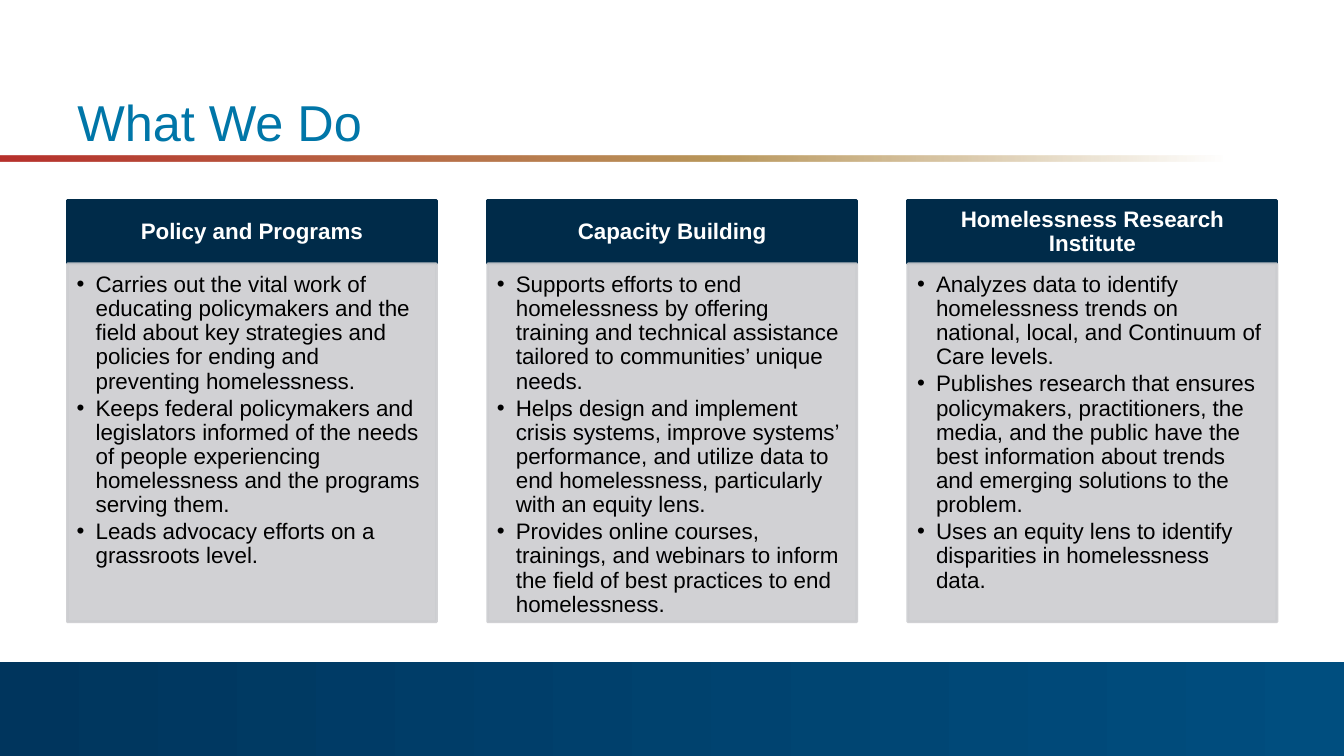
from lxml import etree
from pptx import Presentation, util as u
from pptx.dml.color import RGBColor
from pptx.enum import shapes, text
from pptx.oxml import ns

COLORS = {
    "title": "0076A8", "header": "002B49", "panel": "CCCDD0",
    "white": "FFFFFF", "black": "000000",
    "footer_start": "00355D", "footer_end": "004E7F",
    "red": "B7302C", "gold": "B9975B",
}
SLIDE_W, SLIDE_H = 33.87, 19.05
MARGIN, COLUMN_W, COLUMN_STEP = 1.7, 9.3, 10.59
HEADER_TOP, HEADER_H = 5.06, 1.58
PANEL_TOP, PANEL_H = 6.65, 9.02

PROGRAMS = [
    ("Policy and Programs", [
        "Carries out the vital work of educating policymakers and the field about "
        "key strategies and policies for ending and preventing homelessness.",
        "Keeps federal policymakers and legislators informed of the needs of people "
        "experiencing homelessness and the programs serving them.",
        "Leads advocacy efforts on a grassroots level.",
    ]),
    ("Capacity Building", [
        "Supports efforts to end homelessness by offering training and technical "
        "assistance tailored to communities’ unique needs.",
        "Helps design and implement crisis systems, improve systems’ performance, "
        "and utilize data to end homelessness, particularly with an equity lens.",
        "Provides online courses, trainings, and webinars to inform the field of "
        "best practices to end homelessness.",
    ]),
    ("Homelessness Research Institute", [
        "Analyzes data to identify homelessness trends on national, local, and "
        "Continuum of Care levels.",
        "Publishes research that ensures policymakers, practitioners, the media, and "
        "the public have the best information about trends and emerging solutions "
        "to the problem.",
        "Uses an equity lens to identify disparities in homelessness data.",
    ]),
]


def rgb(name):
    return RGBColor.from_string(COLORS[name])


class SlideBuilder:
    font = "Arial"

    def __init__(self, slide):
        self.slide = slide

    def place(self, shape, left, top, width, height):
        shape.left, shape.top = u.Cm(left), u.Cm(top)
        shape.width, shape.height = u.Cm(width), u.Cm(height)

    def frame(self, shape, anchor, insets):
        frame = shape.text_frame
        frame.word_wrap = True
        frame.auto_size = text.MSO_AUTO_SIZE.NONE
        frame.vertical_anchor = anchor
        (frame.margin_left, frame.margin_top,
         frame.margin_right, frame.margin_bottom) = map(u.Cm, insets)
        return frame

    def run(self, paragraph, words, size, color, bold=False):
        run = paragraph.add_run()
        run.text = words
        run.font.name, run.font.size, run.font.bold = self.font, u.Pt(size), bold
        run.font.color.rgb = rgb(color)

    def paint(self, shape, color, opacity=100):
        shape.fill.solid()
        shape.fill.fore_color.rgb = rgb(color)
        shape.line.width = u.Pt(2)
        shape.line.color.rgb = rgb(color)
        if opacity < 100:
            for tint in shape.element.spPr.iter(ns.qn("a:srgbClr")):
                etree.SubElement(tint, ns.qn("a:alpha"), val=str(opacity * 1000))

    def rectangle(self, left, top, width, height):
        shape = self.slide.shapes.add_shape(
            shapes.MSO_SHAPE.RECTANGLE, *map(u.Cm, (left, top, width, height)))
        shape.shadow.inherit = False
        return shape

    def gradient_band(self, top, height, stops):
        band = self.rectangle(0, top, SLIDE_W, height)
        band.line.fill.background()
        band.fill.gradient()
        band.fill.gradient_angle = 0
        stop_list = band.element.spPr.find(".//" + ns.qn("a:gsLst"))
        for old_stop in list(stop_list):
            stop_list.remove(old_stop)
        for position, color, opacity in stops:
            stop = etree.SubElement(stop_list, ns.qn("a:gs"), pos=str(position * 1000))
            tint = etree.SubElement(stop, ns.qn("a:srgbClr"), val=COLORS[color])
            if opacity < 100:
                etree.SubElement(tint, ns.qn("a:alpha"), val=str(opacity * 1000))

    def title(self, words):
        title = self.slide.shapes.title
        self.place(title, MARGIN, 0.76, 30.48, 3.18)
        frame = self.frame(title, text.MSO_ANCHOR.BOTTOM, (0.25, 0.13, 0.25, 0.13))
        heading = frame.paragraphs[0]
        heading.alignment = text.PP_ALIGN.LEFT
        self.run(heading, words, 36, "title")

    def header(self, left, words):
        header = self.rectangle(left, HEADER_TOP, COLUMN_W, HEADER_H)
        self.paint(header, "header")
        frame = self.frame(header, text.MSO_ANCHOR.MIDDLE, (0.3, 0.18, 0.3, 0.18))
        label = frame.paragraphs[0]
        label.alignment = text.PP_ALIGN.CENTER
        label.line_spacing = 0.9
        self.run(label, words, 16, "white", bold=True)

    def bullet_panel(self, panel, left, items):
        self.place(panel, left, PANEL_TOP, COLUMN_W, PANEL_H)
        self.paint(panel, "panel", opacity=90)
        panel.element.getparent().append(panel.element)  # above its header
        frame = self.frame(panel, text.MSO_ANCHOR.TOP, (0.23, 0.23, 0.3, 0.36))
        for number, item in enumerate(items):
            bullet = frame.add_paragraph() if number else frame.paragraphs[0]
            props = bullet._p.get_or_add_pPr()
            props.set("marL", str(u.Cm(0.48)))
            props.set("indent", str(-u.Cm(0.48)))
            etree.SubElement(props, ns.qn("a:buChar"), char="•")
            bullet.alignment = text.PP_ALIGN.LEFT
            bullet.line_spacing = 0.9
            bullet.space_before, bullet.space_after = u.Pt(0), u.Pt(2)
            self.run(bullet, item, 16, "black")


def main():
    deck = Presentation()
    deck.slide_width, deck.slide_height = u.Cm(SLIDE_W), u.Cm(SLIDE_H)
    slide = deck.slides.add_slide(deck.slide_layouts.get_by_name("Comparison"))
    builder = SlideBuilder(slide)
    _, *panels, spare = slide.placeholders
    spare.element.getparent().remove(spare.element)

    # Footer band and rule under the title
    builder.gradient_band(16.69, 2.36, [(0, "footer_start", 100), (100, "footer_end", 100)])
    builder.gradient_band(3.93, 0.13, [(0, "red", 100), (53, "gold", 100), (91, "gold", 0)])
    builder.title("What We Do")

    # Program columns
    for column, (panel, (name, duties)) in enumerate(zip(panels, PROGRAMS)):
        left = MARGIN + column * COLUMN_STEP
        builder.header(left, name)
        builder.bullet_panel(panel, left, duties)

    deck.save("out.pptx")


if __name__ == "__main__":
    main()
